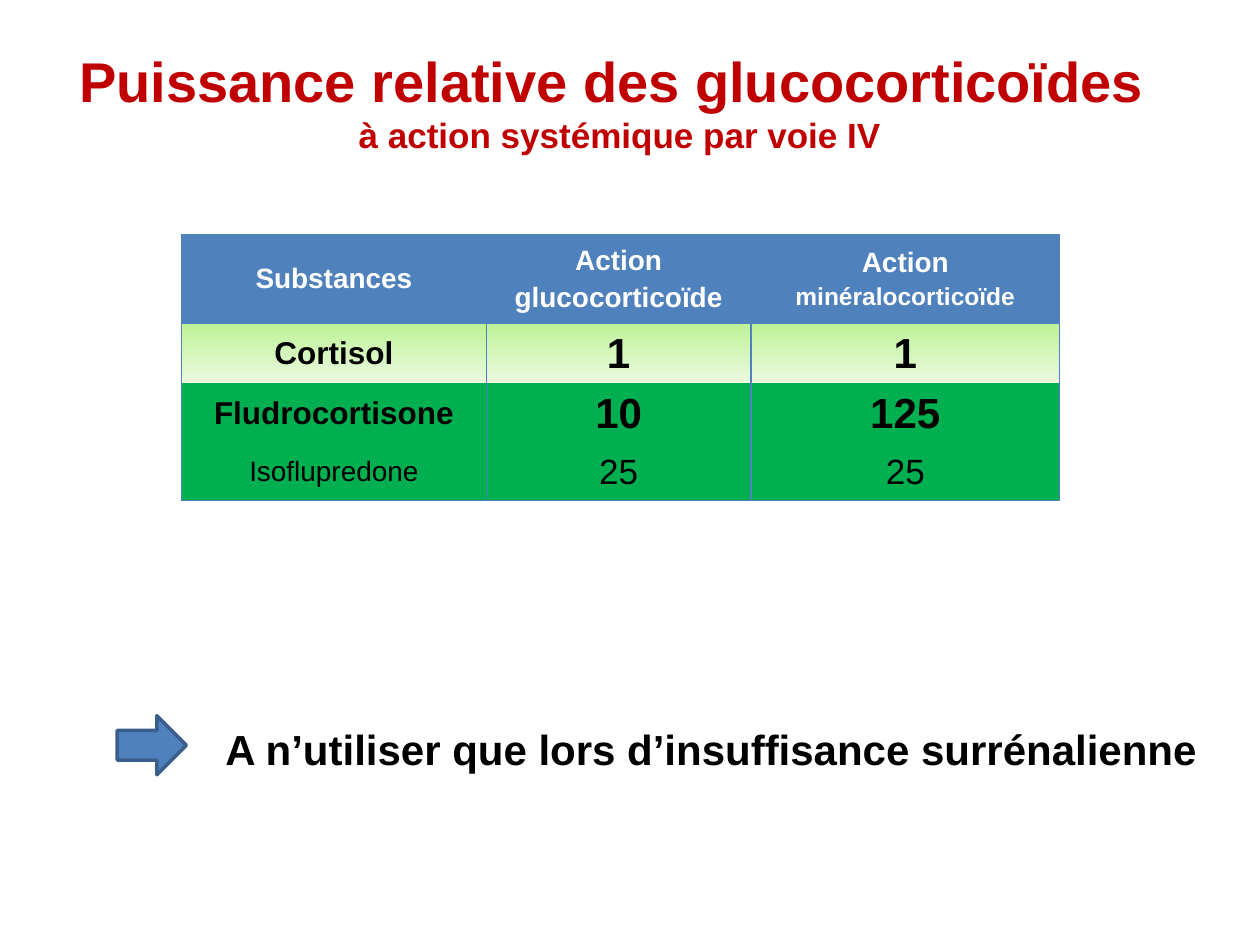
import pptx
import pptx.util
import pptx.dml.color
import pptx.enum.shapes
import pptx.enum.text
import lxml.etree
from pptx.util import Inches

RGBColor = pptx.dml.color.RGBColor
RED = RGBColor(0xC0, 0x00, 0x00)
BLUE = RGBColor(0x4F, 0x81, 0xBD)
DARK_BLUE = RGBColor(0x3A, 0x5F, 0x8C)
GREEN = RGBColor(0x00, 0xB0, 0x50)
LIME = RGBColor(0xBE, 0xF2, 0x97)
PALE_LIME = RGBColor(0xEA, 0xFA, 0xE0)
WHITE = RGBColor(0xFF, 0xFF, 0xFF)
BLACK = RGBColor(0x00, 0x00, 0x00)
CENTER = pptx.enum.text.PP_ALIGN.CENTER
MIDDLE = pptx.enum.text.MSO_ANCHOR.MIDDLE


def add_text(p, text, size, color=BLACK, bold=True, align=None):
    r = p.add_run()
    r.text = text
    r.font.name = "Arial"
    r.font.size = pptx.util.Pt(size)
    r.font.bold = bold
    r.font.color.rgb = color
    p.alignment = align


def add_border(cell, side, visible):
    ns = "{http://schemas.openxmlformats.org/drawingml/2006/main}"
    tc_pr = cell._tc.get_or_add_tcPr()
    ln = lxml.etree.SubElement(tc_pr, ns + side, w=str(pptx.util.Pt(1)))
    if visible:
        fill = lxml.etree.SubElement(ln, ns + "solidFill")
        lxml.etree.SubElement(fill, ns + "srgbClr", val=str(BLUE))
    else:
        lxml.etree.SubElement(ln, ns + "noFill")


prs = pptx.Presentation()
prs.slide_width, prs.slide_height = Inches(10), Inches(7.5)
s = prs.slides.add_slide(prs.slide_layouts[5])

# Title
title = s.shapes.title
title.left, title.top = Inches(0.43), Inches(0.21)
title.width, title.height = Inches(8.98), Inches(1.18)
tf = title.text_frame
tf.vertical_anchor = MIDDLE
p = tf.paragraphs[0]
add_text(p, "Puissance relative des glucocorticoïdes ", 32, RED, align=CENTER)
p.add_line_break()
add_text(p, "à action systémique par voie IV", 20, RED, align=CENTER)

# Table: each cell is a list of (text, size) paragraphs
rows = [
    [[("Substances", 16)],
     [("Action", 16), ("glucocorticoïde", 16)],
     [("Action", 16), ("minéralocorticoïde", 14)]],
    [[("Cortisol", 18)], [("1", 24)], [("1", 24)]],
    [[("Fludrocortisone", 18)], [("10", 24)], [("125", 24)]],
    [[("Isoflupredone", 16)], [("25", 20)], [("25", 20)]],
]
last = len(rows) - 1
table = s.shapes.add_table(len(rows), 3, Inches(1.44), Inches(1.86),
                           Inches(6.97), Inches(2.1)).table
for column, width in zip(table.columns, (2.42, 2.1, 2.45)):
    column.width = Inches(width)
for row, height in zip(table.rows, (0.71, 0.46, 0.48, 0.45)):
    row.height = Inches(height)

for i, row in enumerate(rows):
    for j, lines in enumerate(row):
        cell = table.cell(i, j)
        cell.vertical_anchor = MIDDLE
        tf = cell.text_frame
        for n, (text, size) in enumerate(lines):
            p = tf.add_paragraph() if n else tf.paragraphs[0]
            p.space_before = pptx.util.Pt(0.2 * size)
            add_text(p, text, size, WHITE if i == 0 else BLACK,
                     bold=i < last, align=CENTER)
        for side, visible in (("lnL", True), ("lnR", True),
                              ("lnT", i == 0), ("lnB", i == last)):
            add_border(cell, side, visible)
        if i == 1:
            cell.fill.gradient()
            cell.fill.gradient_angle = 270
            for stop, color in zip(cell.fill.gradient_stops, (LIME, PALE_LIME)):
                stop.color.rgb = color
        else:
            cell.fill.solid()
            cell.fill.fore_color.rgb = BLUE if i == 0 else GREEN

# Conclusion: arrow and sentence
arrow = s.shapes.add_shape(pptx.enum.shapes.MSO_SHAPE.RIGHT_ARROW,
                           Inches(0.93), Inches(5.68), Inches(0.55), Inches(0.47))
arrow.shadow.inherit = False
arrow.fill.solid()
arrow.fill.fore_color.rgb = BLUE
arrow.line.color.rgb = DARK_BLUE
arrow.line.width = pptx.util.Pt(2)

sp = s.shapes.add_textbox(Inches(1.69), Inches(5.69), Inches(8.07), Inches(0.5))
sp.text_frame.word_wrap = False
sp.text_frame.auto_size = pptx.enum.text.MSO_AUTO_SIZE.SHAPE_TO_FIT_TEXT
add_text(sp.text_frame.paragraphs[0],
         "A n’utiliser que lors d’insuffisance surrénalienne", 24)

prs.save("out.pptx")
